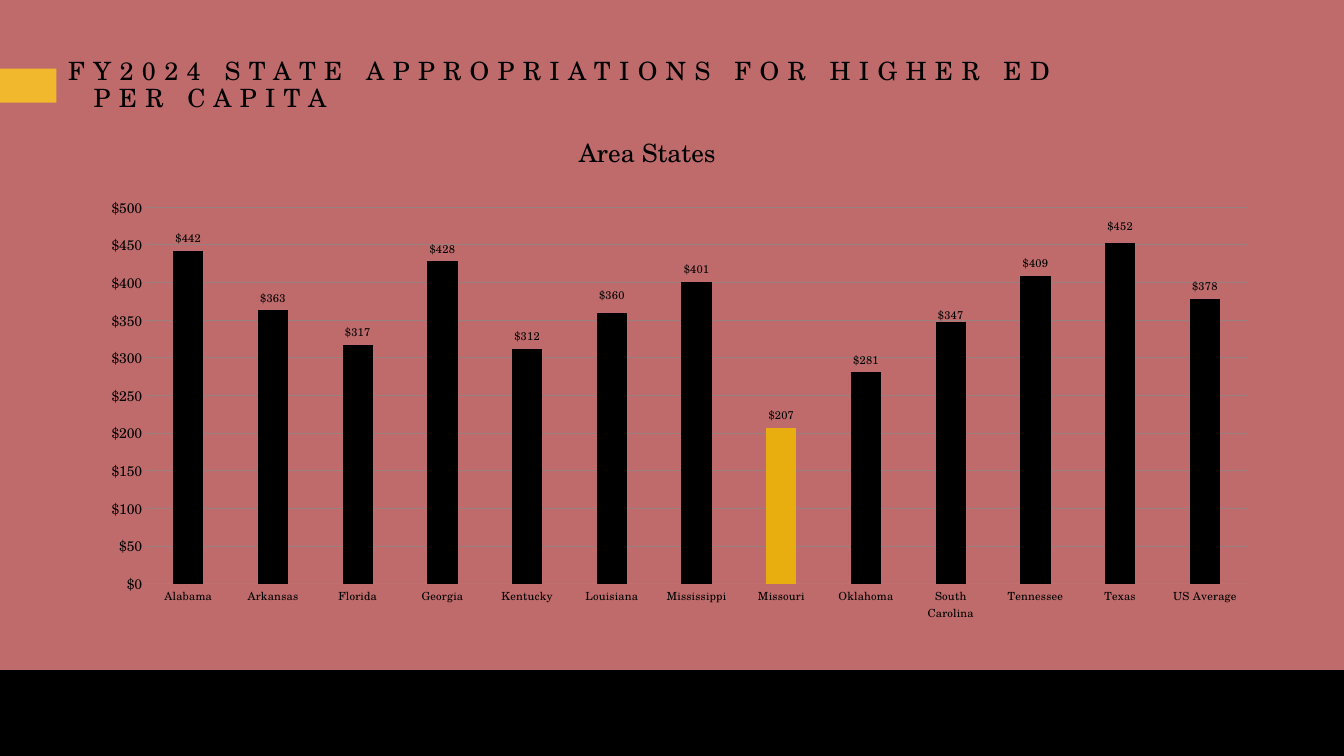
from lxml import etree
from pptx import Presentation
from pptx.chart.data import CategoryChartData
from pptx.dml.color import RGBColor
from pptx.enum.chart import XL_CHART_TYPE, XL_LABEL_POSITION, XL_TICK_MARK
from pptx.enum.shapes import MSO_SHAPE
from pptx.enum.text import MSO_ANCHOR
from pptx.oxml.ns import qn
from pptx.util import Cm, Pt

COLUMNS = XL_CHART_TYPE.COLUMN_CLUSTERED
OUTSIDE_END = XL_LABEL_POSITION.OUTSIDE_END
NO_TICK = XL_TICK_MARK.NONE
RECT = MSO_SHAPE.RECTANGLE
MIDDLE = MSO_ANCHOR.MIDDLE

# Content
HEADING = "FY2024 STATE APPROPRIATIONS FOR HIGHER ED\vPER CAPITA"
CHART_TITLE = "Area States"
DOLLARS = '"$"#,##0'
PER_CAPITA = {
    "Alabama": 442, "Arkansas": 363, "Florida": 317, "Georgia": 428,
    "Kentucky": 312, "Louisiana": 360, "Mississippi": 401, "Missouri": 207,
    "Oklahoma": 281, "South Carolina": 347, "Tennessee": 409, "Texas": 452,
    "US Average": 378,
}
HIGHLIGHT = "Missouri"
# Vertical label shifts, as a share of the chart height
LABEL_SHIFT = {"Louisiana": -0.01, "South Carolina": 0.01, "Texas": -0.01}


class Theme:
    font = "TeX Gyre Schola"
    back = RGBColor.from_string("BF6B6B")
    ink = RGBColor.from_string("000000")
    accent = RGBColor.from_string("F1B82D")
    highlight = RGBColor.from_string("E8AE10")
    grid = RGBColor.from_string("988080")
    axis = RGBColor.from_string("C07070")
    title, scale, label = Pt(18), Pt(10), Pt(8)


def set_font(font, size):
    font.name, font.size, font.bold = Theme.font, size, False
    font.color.rgb = Theme.ink


def add_block(slide, color, left, top, width, height):
    sp = slide.shapes.add_shape(RECT, Cm(left), Cm(top), Cm(width), Cm(height))
    sp.shadow.inherit = False
    sp.fill.solid()
    sp.fill.fore_color.rgb = color
    sp.line.fill.background()


def manual_layout(**values):
    layout = etree.Element(qn("c:layout"))
    manual = etree.SubElement(layout, qn("c:manualLayout"))
    for name, value in values.items():
        etree.SubElement(manual, qn("c:" + name)).set("val", str(value))
    return layout


def put_layout(parent, layout, before):
    for old in parent.findall(qn("c:layout")):
        parent.remove(old)
    parent.find(qn("c:" + before)).addprevious(layout)


prs = Presentation()
prs.slide_width, prs.slide_height = Cm(33.87), Cm(19.05)
s = prs.slides.add_slide(prs.slide_layouts[6])
s.background.fill.solid()
s.background.fill.fore_color.rgb = Theme.back

# Footer band and heading marker
add_block(s, Theme.ink, 0, 16.89, 33.87, 2.16)
add_block(s, Theme.accent, 0, 1.73, 1.42, 0.86)

# Heading
tf = s.shapes.add_textbox(Cm(1.47), Cm(1.73), Cm(30.84), Cm(0.86)).text_frame
tf.word_wrap = True
tf.vertical_anchor = MIDDLE
p = tf.paragraphs[0]
p.text = HEADING
p.line_spacing = 0.9
pPr = p._p.get_or_add_pPr()
pPr.set("marL", str(Cm(0.64)))
pPr.set("indent", str(-Cm(0.64)))
for r in p.runs:
    set_font(r.font, Theme.title)
    r.font._element.set("spc", "600")

# Chart
data = CategoryChartData(number_format=DOLLARS)
data.categories = PER_CAPITA
data.add_series("Series 1", PER_CAPITA.values())
chart = s.shapes.add_chart(COLUMNS, Cm(1.52), Cm(3.2), Cm(30.84), Cm(12.65),
                           data).chart
set_font(chart.font, Theme.title)
chart.has_legend = False
chart.has_title = True
p = chart.chart_title.text_frame.paragraphs[0]
p.text = CHART_TITLE
set_font(p.font, Theme.title)
put_layout(chart.chart_title._element,
           manual_layout(xMode="edge", yMode="edge", x=0.42, y=0), "overlay")

# Plot area and columns
plot = chart.plots[0]
put_layout(plot._element.getparent(),
           manual_layout(layoutTarget="inner", xMode="edge", yMode="edge",
                         x=0.07, y=0.16, w=0.9, h=0.75), "barChart")
plot.gap_width, plot.overlap = 180, 75
plot.vary_by_categories = False
series = plot.series[0]
states = list(PER_CAPITA)
for fill, color in ((series.format.fill, Theme.ink),
                    (series.points[states.index(HIGHLIGHT)].format.fill,
                     Theme.highlight)):
    fill.solid()
    fill.fore_color.rgb = color

# Value labels
labels = series.data_labels
labels.show_value = True
labels.number_format, labels.number_format_is_linked = DOLLARS, False
labels.position = OUTSIDE_END
set_font(labels.font, Theme.label)
for state, shift in LABEL_SHIFT.items():
    index = states.index(state)
    label = series.points[index].data_label
    set_font(label.font, Theme.label)
    label.position = OUTSIDE_END
    for dLbl in labels._element.findall(qn("c:dLbl")):
        if dLbl.find(qn("c:idx")).get("val") == str(index):
            dLbl.find(qn("c:idx")).addnext(manual_layout(x=0, y=shift))

# Axes
for axis, size in ((chart.category_axis, Theme.label),
                   (chart.value_axis, Theme.scale)):
    axis.major_tick_mark = axis.minor_tick_mark = NO_TICK
    set_font(axis.tick_labels.font, size)
chart.category_axis.format.line.color.rgb = Theme.axis
values = chart.value_axis
values.minimum_scale, values.maximum_scale, values.major_unit = 0, 500, 50
values.tick_labels.number_format = DOLLARS
values.tick_labels.number_format_is_linked = False
values.format.line.fill.background()
values.has_major_gridlines = True
values.major_gridlines.format.line.color.rgb = Theme.grid
values.major_gridlines.format.line.width = Pt(0.75)

prs.save("out.pptx")
